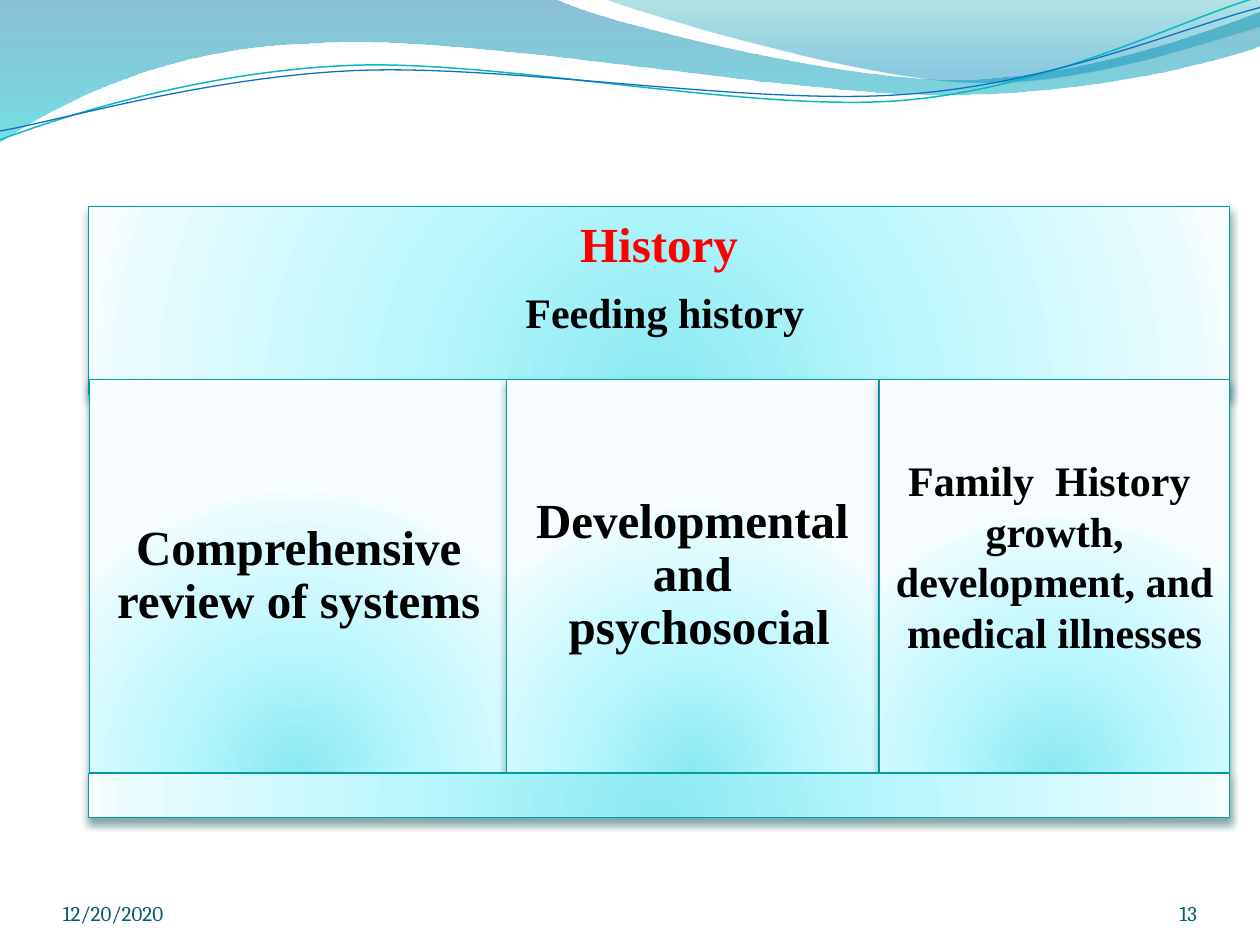
from dataclasses import dataclass

import lxml.etree
import pptx
import pptx.dml.color
import pptx.enum.shapes
import pptx.enum.text
import pptx.oxml.ns
import pptx.util

Inches = pptx.util.Inches
Pt = pptx.util.Pt
Align = pptx.enum.text.PP_ALIGN
Anchor = pptx.enum.text.MSO_ANCHOR
qn = pptx.oxml.ns.qn


@dataclass
class Stop:
    position: int
    color: str
    opacity: int = 100


@dataclass
class Line:
    text: str
    size: int
    color: str = "000000"


@dataclass
class Panel:
    left: float
    top: float
    width: float
    height: float
    lines: tuple[Line, ...] = ()
    inset: float = 0.12
    bottom_inset: float = 0.12
    line_spacing: float = 0.9


@dataclass
class Wave:
    """Segments of one point are straight; those of three points are curves."""
    start: tuple[float, float]
    segments: list[tuple[float, ...]]
    closed: bool = False


PANEL_STOPS = [Stop(0, "8BE9F1"), Stop(43, "B9F7FD"), Stop(93, "EAFCFE"), Stop(100, "F8FEFF")]
BROAD_BAND = Wave((0, 0), [
    (4.4, -0.01), (4.76, 0.17, 6.64, 0.63, 7.58, 0.63), (8.53, 0.63, 9.58, 0.26, 10, 0.09),
    (10.01, 0.36), (9.83, 0.44, 8.7, 0.76, 7.46, 0.75), (6.22, 0.75, 3.82, 0.28, 2.57, 0.34),
    (1.29, 0.36, 0.46, 0.83, -0.01, 1.13)], closed=True)
CORNER_BAND = Wave((4.79, -0.01), [
    (5.09, 0.11, 6.82, 0.62, 7.69, 0.65), (8.56, 0.69, 9.61, 0.32, 10, 0.21),
    (10, 0)], closed=True)
GREEN_STRAND = Wave((0, 1.11), [
    (0.48, 0.93, 1.58, 0.57, 2.77, 0.52), (3.95, 0.47, 5.93, 0.89, 7.13, 0.8),
    (8.33, 0.71, 9.38, 0.15, 9.98, -0.02)])
BLUE_STRAND = Wave((0, 1.04), [
    (0.47, 0.96, 1.64, 0.61, 2.83, 0.56), (4.03, 0.51, 5.97, 0.84, 7.17, 0.75),
    (8.36, 0.67, 9.41, 0.21, 10, 0.06)])


def rgb(value: str) -> pptx.dml.color.RGBColor:
    return pptx.dml.color.RGBColor.from_string(value)


def add_color(parent, value: str, opacity: int) -> None:
    color = lxml.etree.SubElement(parent, qn("a:srgbClr"), val=value)
    if opacity < 100:
        lxml.etree.SubElement(color, qn("a:alpha"), val=str(opacity * 1000))


def set_gradient(shape, stops: list[Stop], radial: bool = False) -> None:
    """Fill from top to bottom, or in circles around a point below the shape."""
    shape.fill.gradient()
    gradient = shape._element.spPr.find(qn("a:gradFill"))
    for child in list(gradient):
        gradient.remove(child)
    stop_list = lxml.etree.SubElement(gradient, qn("a:gsLst"))
    for stop in stops:
        item = lxml.etree.SubElement(stop_list, qn("a:gs"), pos=str(stop.position * 1000))
        add_color(item, stop.color, stop.opacity)
    if radial:
        circle = lxml.etree.SubElement(gradient, qn("a:path"), path="circle")
        lxml.etree.SubElement(circle, qn("a:fillToRect"),
                              l="50000", t="130000", r="50000", b="-30000")
    else:
        lxml.etree.SubElement(gradient, qn("a:lin"), ang="5400000", scaled="0")


def add_shadow(shape) -> None:
    effects = shape._element.spPr.find(qn("a:effectLst"))
    shadow = lxml.etree.SubElement(
        effects, qn("a:outerShdw"), blurRad=str(Pt(4.5)), dist=str(Pt(3)),
        dir="5400000", rotWithShape="0")
    add_color(shadow, "024B4E", 48)


def add_wave(page, wave: Wave):
    builder = page.shapes.build_freeform(Inches(wave.start[0]), Inches(wave.start[1]))
    points = [(Inches(x), Inches(y)) for segment in wave.segments
              for x, y in zip(segment[::2], segment[1::2])]
    builder.add_line_segments(points, close=wave.closed)
    shape = builder.convert_to_shape()
    shape.shadow.inherit = False
    steps = iter(list(shape._element.spPr.iter(qn("a:lnTo"))))
    for segment in wave.segments:
        step = next(steps)
        if len(segment) == 6:
            curve = lxml.etree.Element(qn("a:cubicBezTo"))
            step.addprevious(curve)
            for part in (step, next(steps), next(steps)):
                curve.append(part[0])
                part.getparent().remove(part)
    return shape


def add_band(page, wave: Wave, stops: list[Stop]) -> None:
    shape = add_wave(page, wave)
    set_gradient(shape, stops)
    shape.line.fill.background()


def add_strand(page, wave: Wave, color: str, width: float) -> None:
    shape = add_wave(page, wave)
    shape.fill.background()
    shape.line.color.rgb = rgb(color)
    shape.line.width = Pt(width)


def style_span(span, font: str, size: int, color: str, bold: bool = False) -> None:
    span.font.name = font
    span.font.size = Pt(size)
    span.font.bold = bold
    span.font.color.rgb = rgb(color)


def add_panel(page, panel: Panel) -> None:
    box = page.shapes.add_shape(
        pptx.enum.shapes.MSO_SHAPE.RECTANGLE, Inches(panel.left), Inches(panel.top),
        Inches(panel.width), Inches(panel.height))
    set_gradient(box, PANEL_STOPS, radial=True)
    box.line.color.rgb = rgb("069CA3")
    box.line.width = Pt(0.75)
    box.shadow.inherit = False
    add_shadow(box)
    if not panel.lines:
        return
    frame = box.text_frame
    frame.word_wrap = True
    frame.vertical_anchor = Anchor.MIDDLE
    frame.margin_left = frame.margin_right = frame.margin_top = Inches(panel.inset)
    frame.margin_bottom = Inches(panel.bottom_inset)
    frame.text = "\n".join(line.text for line in panel.lines)
    for para, line in zip(frame.paragraphs, panel.lines):
        para.alignment = Align.CENTER
        para.line_spacing = panel.line_spacing
        para._p.get_or_add_pPr().set("rtl", "1")
        if line is not panel.lines[-1]:
            para.space_after = Pt(11)
        style_span(para.runs[0], "Times New Roman", line.size, line.color, bold=True)


def add_footer(page, text: str, left: float, width: float, alignment) -> None:
    box = page.shapes.add_textbox(Inches(left), Inches(6.95), Inches(width), Inches(0.4))
    frame = box.text_frame
    frame.word_wrap = True
    frame.vertical_anchor = Anchor.BOTTOM
    frame.margin_left = frame.margin_right = frame.margin_top = frame.margin_bottom = 0
    frame.text = text
    para = frame.paragraphs[0]
    para.alignment = alignment
    style_span(para.runs[0], "Cambria", 12, "045D75")


def main() -> None:
    deck = pptx.Presentation()
    deck.slide_width, deck.slide_height = Inches(10), Inches(7.5)
    page = deck.slides.add_slide(deck.slide_layouts[6])

    add_band(page, BROAD_BAND, [Stop(0, "0074A1", 45), Stop(100, "00C6CF", 55)])
    add_band(page, CORNER_BAND, [Stop(0, "00A1A9", 30), Stop(80, "008BBF", 45)])
    add_strand(page, GREEN_STRAND, "0AB8BF", 0.85)
    add_strand(page, BLUE_STRAND, "0F6FC6", 0.75)

    heading = (Line("History", 28, "FF0000"), Line("Feeding history ", 24))
    add_panel(page, Panel(0.7, 1.64, 9.06, 1.49, heading, bottom_inset=0.47))
    row = {"top": 3.01, "height": 3.12}
    add_panel(page, Panel(left=0.71, width=3.32, **row,
                          lines=(Line("Comprehensive review of systems", 28),)))
    add_panel(page, Panel(left=4.02, width=2.95, **row,
                          lines=(Line("Developmental and psychosocial ", 28),)))
    family = Line("Family  History  growth, development, and medical illnesses", 24)
    add_panel(page, Panel(left=6.98, width=2.78, **row, lines=(family,),
                          inset=0.1, bottom_inset=0.42, line_spacing=1.0))
    add_panel(page, Panel(0.7, 6.14, 9.06, 0.35))

    add_footer(page, "12/20/2020", 0.5, 2.33, Align.LEFT)
    add_footer(page, "13", 8.67, 0.83, Align.RIGHT)
    deck.save("out.pptx")


if __name__ == "__main__":
    main()
